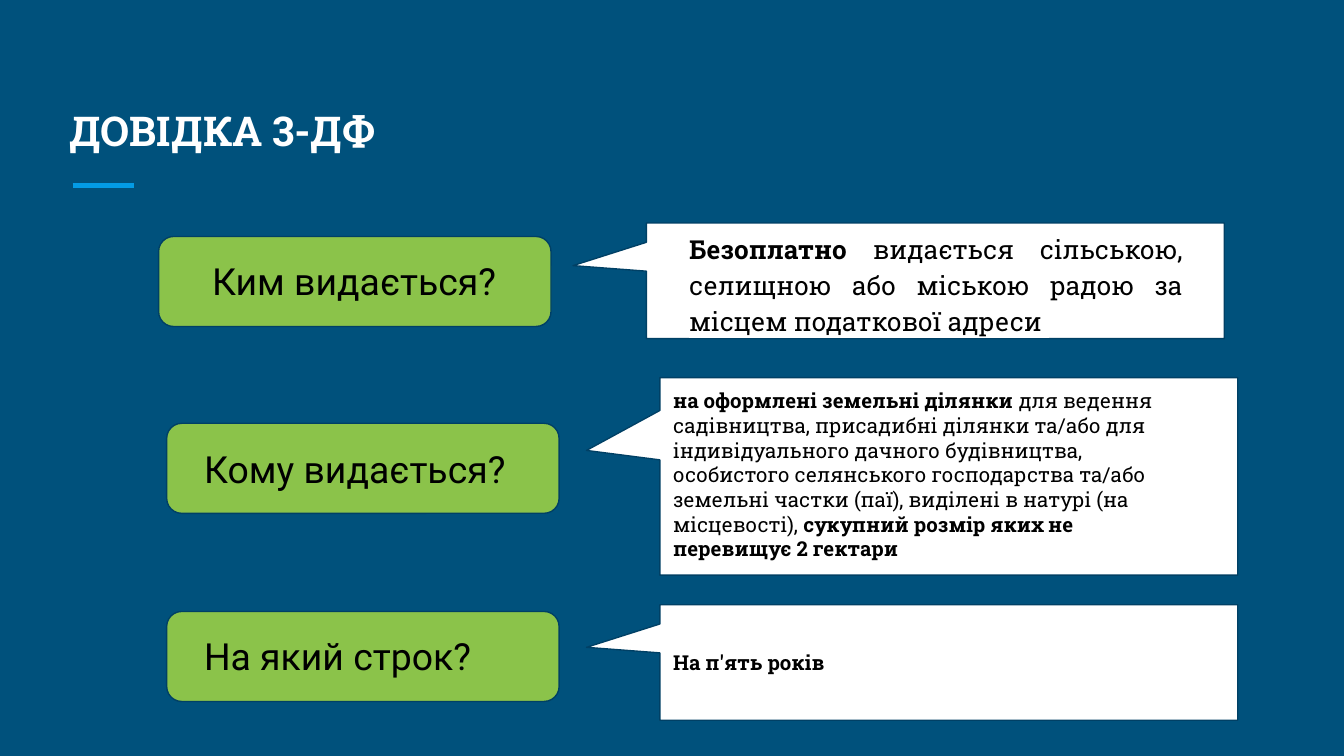
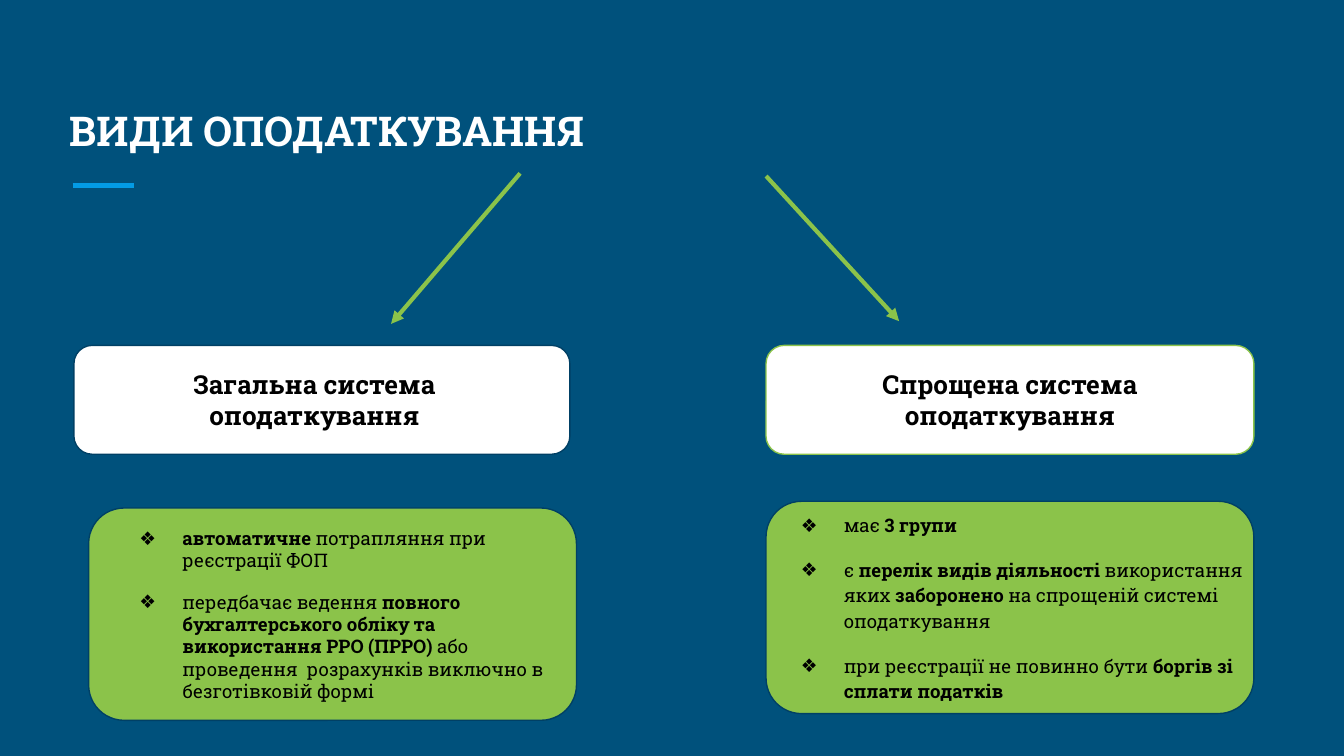
"""Builds two slides on the 3-ДФ certificate and the kinds of taxation."""
import pptx
import pptx.dml.color
import pptx.enum.shapes
import pptx.enum.text
import pptx.oxml
import pptx.oxml.ns
import pptx.util

Inches, Pt = pptx.util.Inches, pptx.util.Pt
Color = pptx.dml.color.RGBColor
Kind = pptx.enum.shapes.MSO_SHAPE
Align = pptx.enum.text.PP_ALIGN
Anchor = pptx.enum.text.MSO_ANCHOR
Fit = pptx.enum.text.MSO_AUTO_SIZE

NAVY = Color(0x00, 0x51, 0x7C)
EDGE = Color(0x00, 0x40, 0x65)
BLUE = Color(0x03, 0x9B, 0xE5)
GREEN = Color(0x8B, 0xC3, 0x4A)
WHITE = Color(0xFF, 0xFF, 0xFF)
BLACK = Color(0x00, 0x00, 0x00)
SLAB = "Roboto Slab"
NS = pptx.oxml.ns.nsdecls("a")
BULLET = (
    f'<a:buClr {NS}><a:srgbClr val="{BLACK}"/></a:buClr>',
    f'<a:buFont {NS} typeface="{SLAB}"/>',
    f'<a:buChar {NS} char="❖"/>',
)
MARK = f'<a:highlight {NS}><a:srgbClr val="{WHITE}"/></a:highlight>'


def panel(slide, kind, at, fill, edge, bends):
    shape = slide.shapes.add_shape(kind, *map(Inches, at))
    shape.shadow.inherit = False
    shape.fill.solid()
    shape.fill.fore_color.rgb = fill
    shape.line.color.rgb = edge
    shape.line.width = Pt(0.75)
    for i, bend in enumerate(bends):
        shape.adjustments[i] = bend
    return shape


def write(shape, paras, size, name=SLAB, color=BLACK, anchor=Anchor.TOP,
          fit=Fit.SHAPE_TO_FIT_TEXT, bullet=False, mark=False):
    """Fill a shape with (text, format) pairs; stars enclose bold words."""
    frame = shape.text_frame
    look = {"word_wrap": True, "auto_size": fit, "vertical_anchor": anchor}
    look.update({f"margin_{side}": Inches(0.1)
                 for side in ("left", "right", "top", "bottom")})
    for key, value in look.items():
        setattr(frame, key, value)
    for i, (text, form) in enumerate(paras):
        para = frame.add_paragraph() if i else frame.paragraphs[0]
        for key, value in {"alignment": Align.LEFT, **form}.items():
            setattr(para, key, value)
        if bullet:
            props = para._p.get_or_add_pPr()
            props.set("marL", str(Inches(0.5)))
            props.set("indent", str(Inches(-0.32)))
            for xml in BULLET:
                props.append(pptx.oxml.parse_xml(xml))
        for j, part in enumerate(text.split("*")):
            if not part:
                continue
            run = para.add_run()
            run.text = part
            run.font.color.rgb = color
            style = {"size": Pt(size), "name": name, "bold": j % 2 == 1}
            for key, value in style.items():
                setattr(run.font, key, value)
            if mark:
                fill = run._r.rPr.find(pptx.oxml.ns.qn("a:solidFill"))
                fill.addnext(pptx.oxml.parse_xml(MARK))


deck = pptx.Presentation()
deck.slide_width, deck.slide_height = Inches(10), Inches(10 * 9 / 16)
back = deck.slide_master.background.fill
back.solid()
back.fore_color.rgb = NAVY

slides = []
for name in ("ДОВІДКА 3-ДФ", "ВИДИ ОПОДАТКУВАННЯ"):
    slide = deck.slides.add_slide(deck.slide_layouts[5])
    title = slide.shapes.title
    title.left, title.top = Inches(0.42), Inches(0.5)
    title.width, title.height = Inches(9.15), Inches(0.75)
    write(title, [(f"*{name}*", {})], 22, color=WHITE,
          anchor=Anchor.BOTTOM, fit=Fit.NONE)
    slides.append(slide)
form, kinds = slides

asks = [
    ("Ким видається?", 1.18, 1.76, 1.48, 1.82),
    ("Кому видається?", 1.24, 3.15, 1.42, 3.22),
    ("На який строк?", 1.24, 4.55, 1.42, 4.61),
]
for ask, left, top, x, y in asks:
    panel(form, Kind.ROUNDED_RECTANGLE, (left, top, 2.92, 0.67),
          GREEN, EDGE, [0.167])
    label = form.shapes.add_textbox(*map(Inches, (x, y, 2.56, 0.54)))
    write(label, [(ask, {})], 20, name="Roboto")

calls = [
    panel(form, Kind.ROUNDED_RECTANGULAR_CALLOUT, (left, top, 4.3, high),
          WHITE, EDGE, [-0.627, -0.131, 0])
    for left, top, high in ((4.81, 1.66, 0.86), (4.91, 2.81, 1.47),
                            (4.91, 4.5, 0.86))
]
write(calls[2], [("*На п'ять років*", {})], 11, anchor=Anchor.MIDDLE,
      fit=Fit.NONE)

giver = form.shapes.add_textbox(*map(Inches, (5.03, 1.6, 3.87, 0.98)))
write(giver, [(
    "*Безоплатно* видається сільською, селищною або міською радою "
    "за місцем податкової адреси ",
    {"alignment": Align.JUSTIFY, "line_spacing": 1.15,
     "space_after": Pt(11)},
)], 14, mark=True)

taker = form.shapes.add_textbox(*map(Inches, (4.91, 2.79, 3.92, 1.5)))
write(taker, [(
    "*на оформлені земельні ділянки* для ведення садівництва, присадибні "
    "ділянки та/або для індивідуального дачного будівництва, особистого "
    "селянського господарства та/або земельні частки (паї), виділені в "
    "натурі (на місцевості), *сукупний розмір яких не перевищує 2 гектари*",
    {},
)], 11)

wide = {"line_spacing": 1.15}
gap = {"space_before": Pt(10)}
plain = [
    ("*автоматичне* потрапляння при реєстрації ФОП", {}),
    ("передбачає ведення *повного бухгалтерського обліку та використання "
     "РРО (ПРРО)* або проведення  розрахунків виключно в безготівковій "
     "формі", {**gap, "space_after": Pt(10)}),
]
easy = [
    ("має *3 групи*", wide),
    ("є *перелік видів діяльності* використання яких *заборонено *на "
     "спрощеній системі оподаткування", {**wide, **gap}),
    ("при реєстрації не повинно бути *боргів зі сплати податків*",
     {**wide, **gap}),
]
sides = [
    ("Загальна", (0.55, 2.57, 3.69, 0.81), EDGE, (0.82, 2.64, 3.04, 0.67),
     (0.66, 3.78, 3.63, 1.58), (0.76, 3.82, 3.63, 1.52), plain),
    ("Спрощена", (5.7, 2.57, 3.63, 0.81), GREEN, (5.95, 2.64, 3.13, 0.67),
     (5.7, 3.73, 3.63, 1.58), (5.68, 3.7, 3.69, 2.02), easy),
]
for word, head, edge, name, body, notes, items in sides:
    panel(kinds, Kind.ROUNDED_RECTANGLE, head, WHITE, edge, [0.167])
    label = kinds.shapes.add_textbox(*map(Inches, name))
    write(label, [(f"*{word} система оподаткування*",
                   {"alignment": Align.CENTER})], 14)
    panel(kinds, Kind.ROUNDED_RECTANGLE, body, GREEN, EDGE, [0.167])
    points = kinds.shapes.add_textbox(*map(Inches, notes))
    write(points, items, 10, bullet=True)

dash = (0.54, 1.38, 1, 1.38)
lines = [
    (form, dash, BLUE, 3, False),
    (kinds, dash, BLUE, 3, False),
    (kinds, (3.87, 1.29, 2.91, 2.41), GREEN, 2.25, True),
    (kinds, (5.7, 1.31, 6.69, 2.39), GREEN, 2.25, True),
]
for slide, ends, color, width, arrow in lines:
    line = slide.shapes.add_connector(
        pptx.enum.shapes.MSO_CONNECTOR.STRAIGHT, *map(Inches, ends))
    line.line.color.rgb = color
    line.line.width = Pt(width)
    props = line._element.spPr
    if arrow:
        props.find(pptx.oxml.ns.qn("a:ln")).append(
            pptx.oxml.parse_xml(f'<a:tailEnd {NS} type="triangle"/>'))
    props.append(pptx.oxml.parse_xml(f"<a:effectLst {NS}/>"))

deck.save("out.pptx")
